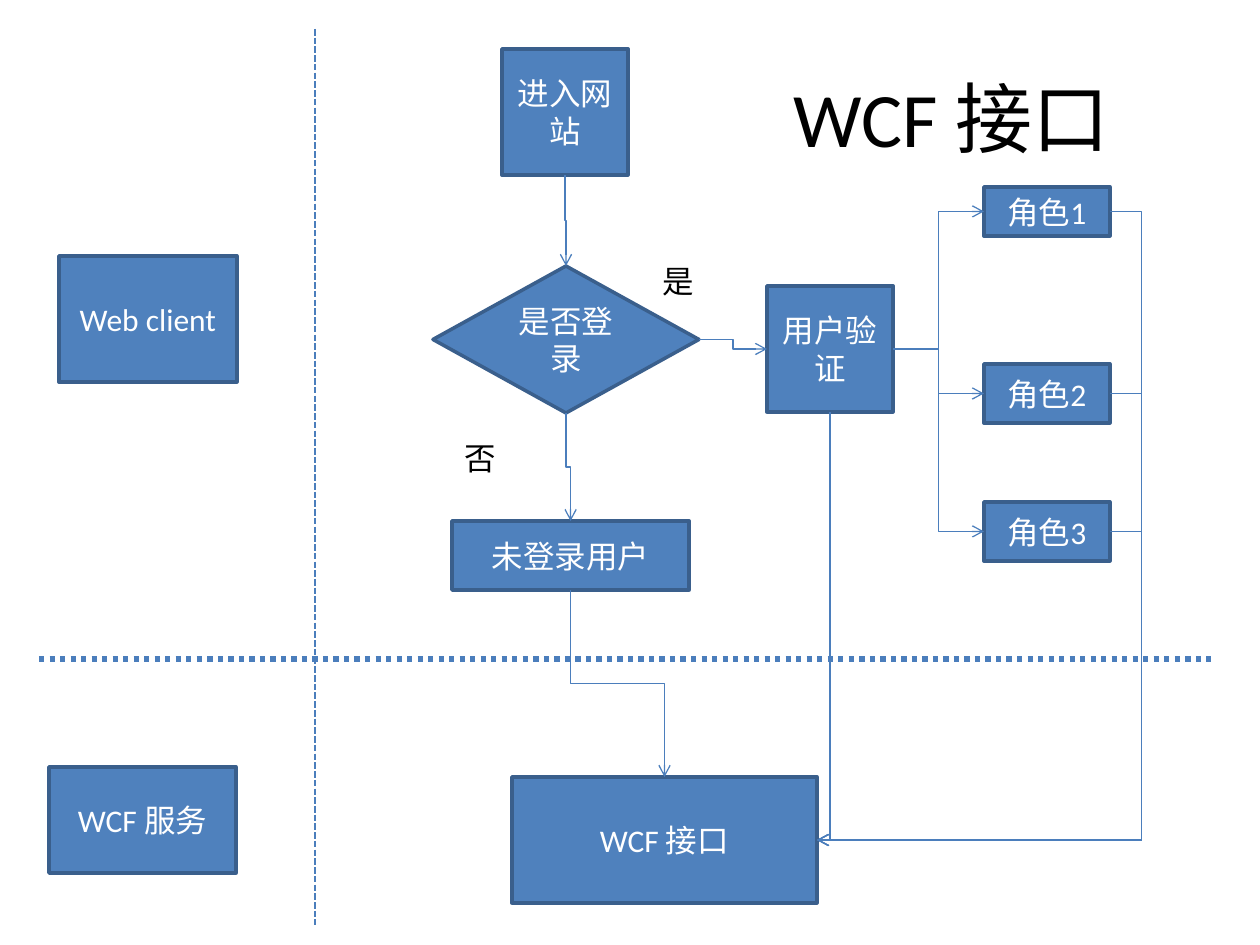
"""Build a slide that shows how site visitors reach the WCF interface."""
from lxml.etree import SubElement
from pptx import Presentation
from pptx.dml.color import RGBColor
from pptx.enum.dml import MSO_LINE as Dash
from pptx.enum.shapes import MSO_CONNECTOR as Link, MSO_SHAPE as Shape
from pptx.enum.text import MSO_ANCHOR as Anchor, MSO_AUTO_SIZE as AutoSize, PP_ALIGN as Align
from pptx.oxml.ns import qn
from pptx.util import Emu, Pt

THEME = {
    "font": "Calibri", "title": Pt(44), "body": Pt(18),
    "black": RGBColor.from_string("000000"), "white": RGBColor.from_string("FFFFFF"),
    "fill": RGBColor.from_string("4F81BD"), "border": RGBColor.from_string("3A5F8C"),
    "link": RGBColor.from_string("4B7EBC"),
}
PX = 914400 / 126
TOP, LEFT, BOTTOM, RIGHT = range(4)


def write(shape, text, size, color, align, frame_format):
    frame = shape.text_frame
    for name, value in frame_format.items():
        setattr(frame, name, value)
    para = frame.paragraphs[0]
    para.alignment = align
    span = para.add_run()
    span.text = text
    for name, value in {"name": THEME["font"], "size": size}.items():
        setattr(span.font, name, value)
    span.font.color.rgb = color


def style_link(link, width):
    link.line.color.rgb = THEME["link"]
    link.line.width = Pt(width)
    SubElement(link._element.spPr, qn("a:effectLst"))


deck = Presentation()
deck.slide_width, deck.slide_height = Emu(round(1260 * PX)), Emu(round(945 * PX))
page = deck.slides.add_slide(deck.slide_layouts[5])

title = page.shapes.title
title_place = {"left": 63, "top": 38, "width": 1134, "height": 157}
for name, value in title_place.items():
    setattr(title, name, Emu(round(value * PX)))
write(title, "WCF 接口", THEME["title"], THEME["black"], Align.CENTER,
      {"vertical_anchor": Anchor.MIDDLE, "margin_left": Emu(round(656 * PX))})

boxes = {}
for key, text, kind, *place in [
    ("interface", "WCF 接口", Shape.RECTANGLE, 512, 777, 305, 126),
    ("guest", "未登录用户", Shape.RECTANGLE, 452, 521, 237, 69),
    ("role 2", "角色2", Shape.RECTANGLE, 984, 364, 126, 59),
    ("role 3", "角色3", Shape.RECTANGLE, 984, 502, 126, 59),
    ("role 1", "角色1", Shape.RECTANGLE, 984, 187, 126, 49),
    ("verify", "用户验证", Shape.RECTANGLE, 767, 286, 126, 126),
    ("enter", "进入网站", Shape.RECTANGLE, 502, 49, 126, 126),
    ("signed in", "是否登录", Shape.FLOWCHART_DECISION, 433, 266, 266, 147),
    ("service", "WCF 服务", Shape.RECTANGLE, 49, 767, 187, 106),
    ("client", "Web client", Shape.RECTANGLE, 59, 256, 178, 126),
]:
    box = page.shapes.add_shape(kind, *[Emu(round(value * PX)) for value in place])
    box.shadow.inherit = False
    box.fill.solid()
    box.fill.fore_color.rgb = THEME["fill"]
    box.line.color.rgb = THEME["border"]
    box.line.width = Pt(2)
    write(box, text, THEME["body"], THEME["white"], Align.CENTER,
          {"vertical_anchor": Anchor.MIDDLE, "word_wrap": True})
    boxes[key] = box

for text, wrap, *place in [("否", True, 452, 433, 39, 50), ("是", False, 650, 256, 57, 50)]:
    label = page.shapes.add_textbox(*[Emu(round(value * PX)) for value in place])
    write(label, text, THEME["body"], THEME["black"], Align.LEFT,
          {"word_wrap": wrap, "auto_size": AutoSize.SHAPE_TO_FIT_TEXT})

roles = ["role 1", "role 2", "role 3"]
for start, start_site, end, end_site in [
    ("enter", BOTTOM, "signed in", TOP),
    ("signed in", BOTTOM, "guest", TOP),
    ("guest", BOTTOM, "interface", TOP),
    ("signed in", RIGHT, "verify", LEFT),
    *[("verify", RIGHT, role, LEFT) for role in roles],
    ("verify", BOTTOM, "interface", RIGHT),
    *[(role, RIGHT, "interface", RIGHT) for role in roles],
]:
    link = page.shapes.add_connector(Link.ELBOW, 0, 0, 0, 0)
    link.begin_connect(boxes[start], start_site)
    link.end_connect(boxes[end], end_site)
    style_link(link, 0.75)
    SubElement(link.line._get_or_add_ln(), qn("a:tailEnd"), type="arrow")
    geometry = link._element.spPr.find(qn("a:prstGeom"))
    if start_site == BOTTOM:
        run, drop = link.end_x - link.begin_x, link.end_y - link.begin_y
        middle_x, middle_y = link.begin_x + run / 2, link.begin_y + drop / 2
        turned = {"left": Emu(round(middle_x - drop / 2)),
                  "top": Emu(round(middle_y - abs(run) / 2)),
                  "width": Emu(drop), "height": Emu(abs(run)),
                  "rotation": 270 if run >= 0 else 90}
        for name, value in turned.items():
            setattr(link, name, value)
        link._element.spPr.find(qn("a:xfrm")).set("flipH", "1" if run >= 0 else "0")
        if end_site == RIGHT:
            geometry.set("prst", "bentConnector2")
    elif end_site == RIGHT:
        SubElement(geometry.find(qn("a:avLst")), qn("a:gd"), name="adj1", fmla="val -10700")

for width, dash, *ends in [
    (3, Dash.ROUND_DOT, 39, 659, 1211, 659),
    (1.25, Dash.SQUARE_DOT, 315, 29, 315, 925),
]:
    divider = page.shapes.add_connector(Link.STRAIGHT, *[Emu(round(value * PX)) for value in ends])
    style_link(divider, width)
    divider.line.dash_style = dash

deck.save("out.pptx")
